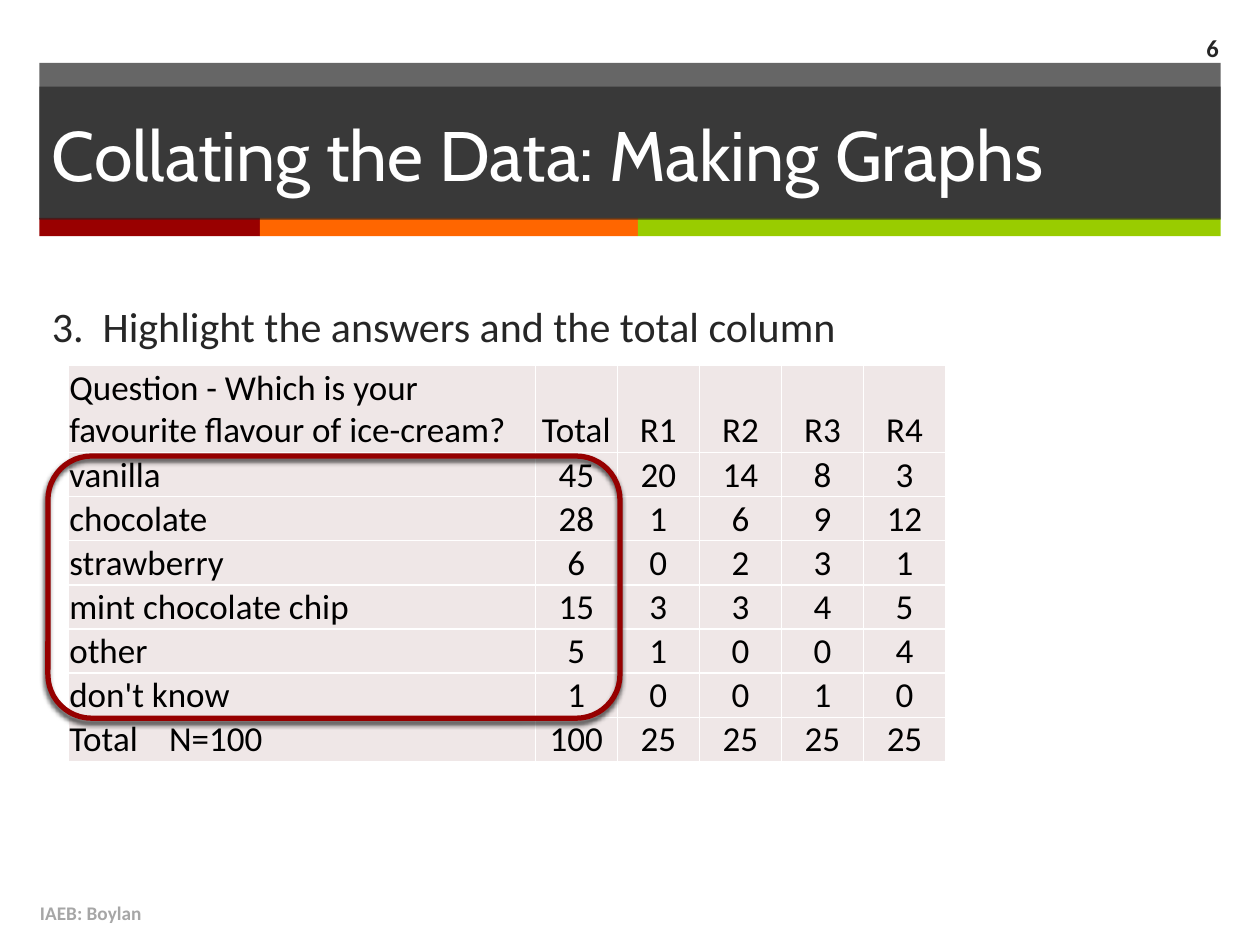
from dataclasses import dataclass

from lxml import etree
from pptx import Presentation
from pptx.dml.color import RGBColor
from pptx.enum.shapes import MSO_SHAPE
from pptx.enum.text import MSO_ANCHOR, MSO_AUTO_SIZE, PP_ALIGN
from pptx.oxml.ns import qn
from pptx.util import Pt

RECTANGLE, ROUNDED = MSO_SHAPE.RECTANGLE, MSO_SHAPE.ROUNDED_RECTANGLE
TOP, MIDDLE, BOTTOM = MSO_ANCHOR.TOP, MSO_ANCHOR.MIDDLE, MSO_ANCHOR.BOTTOM
LEFT, CENTER, RIGHT = PP_ALIGN.LEFT, PP_ALIGN.CENTER, PP_ALIGN.RIGHT
NO_AUTOFIT = MSO_AUTO_SIZE.NONE


@dataclass(frozen=True)
class Theme:
    heading: str = "Cabin"
    text: str = "Calibri"
    dark: str = "262626"
    white: str = "FFFFFF"
    black: str = "000000"
    grey: str = "A6A6A6"
    cell: str = "EFE7E7"
    outline: str = "960000"
    stripes: tuple = ("990000", "FF6600", "99CC00")
    title_size: float = 40
    body_size: float = 24
    table_size: float = 20
    number_size: float = 14
    footer_size: float = 11


def add_xml(parent, tag, **attributes):
    return etree.SubElement(parent, qn(tag), attributes)


def apply(target, values):
    for name, value in values.items():
        setattr(target, name, value)


class SlideBuilder:
    """Draws styled elements on the current slide."""

    def __init__(self, slide, theme):
        self.slide = slide
        self.theme = theme

    def set_text(self, frame, text, size, color, align=LEFT, name=None, bold=False):
        paragraph = frame.paragraphs[0]
        paragraph.text = text
        apply(paragraph, {"alignment": align, "space_before": Pt(0)})
        font = paragraph.runs[0].font
        apply(font, {"name": name or self.theme.text, "size": Pt(size), "bold": bold})
        font.color.rgb = RGBColor.from_string(color)
        return paragraph

    def paint(self, shape, color, opacity=100):
        shape.fill.solid()
        shape.fill.fore_color.rgb = RGBColor.from_string(color)
        if opacity < 100:
            color_element = next(shape.element.spPr.iter(qn("a:srgbClr")))
            add_xml(color_element, "a:alpha", val=str(opacity * 1000))

    def bar(self, left, top, width, height, color, opacity=100):
        shape = self.slide.shapes.add_shape(RECTANGLE, Pt(left), Pt(top), Pt(width), Pt(height))
        shape.shadow.inherit = False
        shape.line.fill.background()
        self.paint(shape, color, opacity)

    def placeholder(self, index, box, anchor, text, size, color, name=None):
        shape = self.slide.placeholders[index]
        apply(shape, dict(zip(("left", "top", "width", "height"), map(Pt, box))))
        shape.element.getparent().append(shape.element)
        apply(shape.text_frame, {"auto_size": NO_AUTOFIT, "vertical_anchor": anchor, "word_wrap": True})
        return shape, self.set_text(shape.text_frame, text, size, color, name=name)

    def title(self, box, text):
        theme = self.theme
        shape, _ = self.placeholder(0, box, MIDDLE, text, theme.title_size, theme.white, theme.heading)
        self.paint(shape, theme.dark, 70)

    def numbered_item(self, box, text, number, indent):
        theme = self.theme
        _, paragraph = self.placeholder(1, box, TOP, text, theme.body_size, theme.dark)
        properties = paragraph._p.get_or_add_pPr()
        properties.set("marL", str(Pt(indent)))
        properties.set("indent", str(-Pt(indent)))
        add_xml(properties, "a:buFont", typeface=theme.text)
        add_xml(properties, "a:buAutoNum", type="arabicPeriod", startAt=str(number))

    def label(self, box, text, size, color, align=LEFT):
        frame = self.slide.shapes.add_textbox(*map(Pt, box)).text_frame
        apply(frame, {"word_wrap": True, "vertical_anchor": MIDDLE})
        self.set_text(frame, text, size, color, align, bold=True)

    def cell(self, cell, text, align):
        theme = self.theme
        margins = dict.fromkeys(("margin_left", "margin_right", "margin_top"), Pt(0.72))
        apply(cell, {**margins, "margin_bottom": 0, "vertical_anchor": BOTTOM})
        properties = cell._tc.get_or_add_tcPr()
        for side in "LRTB":
            line = add_xml(properties, f"a:ln{side}", w=str(Pt(1)))
            add_xml(add_xml(line, "a:solidFill"), "a:srgbClr", val=theme.white)
        cell.fill.solid()
        cell.fill.fore_color.rgb = RGBColor.from_string(theme.cell)
        paragraph = self.set_text(cell.text_frame, text, theme.table_size, theme.black, align)
        if "\t" in text:
            tabs = add_xml(paragraph._p.get_or_add_pPr(), "a:tabLst")
            add_xml(tabs, "a:tab", pos=str(Pt(57)), algn="l")

    def table(self, left, top, widths, heights, rows):
        size = Pt(sum(widths)), Pt(sum(heights))
        frame = self.slide.shapes.add_table(len(rows), len(widths), Pt(left), Pt(top), *size)
        table = frame.table
        apply(table, {"first_row": False, "horz_banding": False})
        for column, width in zip(table.columns, widths):
            column.width = Pt(width)
        for row, height, values in zip(table.rows, heights, rows):
            row.height = Pt(height)
            for index, value in enumerate(values):
                self.cell(row.cells[index], str(value), CENTER if index else LEFT)

    def highlight(self, box):
        shape = self.slide.shapes.add_shape(ROUNDED, *map(Pt, box))
        shape.fill.background()
        shape.line.color.rgb = RGBColor.from_string(self.theme.outline)
        shape.line.width = Pt(3)
        shape.shadow.inherit = False
        effects = shape.element.spPr.find(qn("a:effectLst"))
        shadow = add_xml(effects, "a:outerShdw", blurRad=str(Pt(3)), dist=str(Pt(2)),
                         dir=str(110 * 60000), rotWithShape="0")
        color = add_xml(shadow, "a:srgbClr", val=self.theme.black)
        add_xml(color, "a:alpha", val="75000")


def main():
    theme = Theme()
    presentation = Presentation()
    apply(presentation, {"slide_width": Pt(720), "slide_height": Pt(540)})
    slide = presentation.slides.add_slide(presentation.slide_layouts[1])
    builder = SlideBuilder(slide, theme)

    left, width = 22.5, 675
    builder.bar(left, 36, width, 89, theme.dark, 70)
    stripe_left = left
    for stripe_width, color in zip((126, 216, 333), theme.stripes):
        builder.bar(stripe_left, 124.5, stripe_width, 10.5, color)
        stripe_left += stripe_width
    builder.title((left, 49.5, width, 76), "Collating the Data: Making Graphs")
    builder.label((15.8, 507, 482, 29), "IAEB: Boylan", theme.footer_size, theme.grey)
    builder.label((653.8, 13, 49.7, 28), "6", theme.number_size, theme.dark, RIGHT)
    builder.numbered_item((left, 168, width, 314.5),
                          "Highlight the answers and the total column", 3, 29)

    rows = [
        ("Question - Which is your favourite flavour of ice-cream?", "Total", "R1", "R2", "R3", "R4"),
        ("vanilla", 45, 20, 14, 8, 3),
        ("chocolate", 28, 1, 6, 9, 12),
        ("strawberry", 6, 0, 2, 3, 1),
        ("mint chocolate chip", 15, 3, 3, 4, 5),
        ("other", 5, 1, 0, 0, 4),
        ("don't know", 1, 0, 0, 1, 0),
        ("Total\tN=100", 100, 25, 25, 25, 25),
    ]
    builder.table(38.9, 208.8, [267] + [46.9] * 5, [49.5] + [25.2] * 7, rows)
    builder.highlight((27.4, 260.6, 326.9, 149.8))
    presentation.save("out.pptx")


if __name__ == "__main__":
    main()
